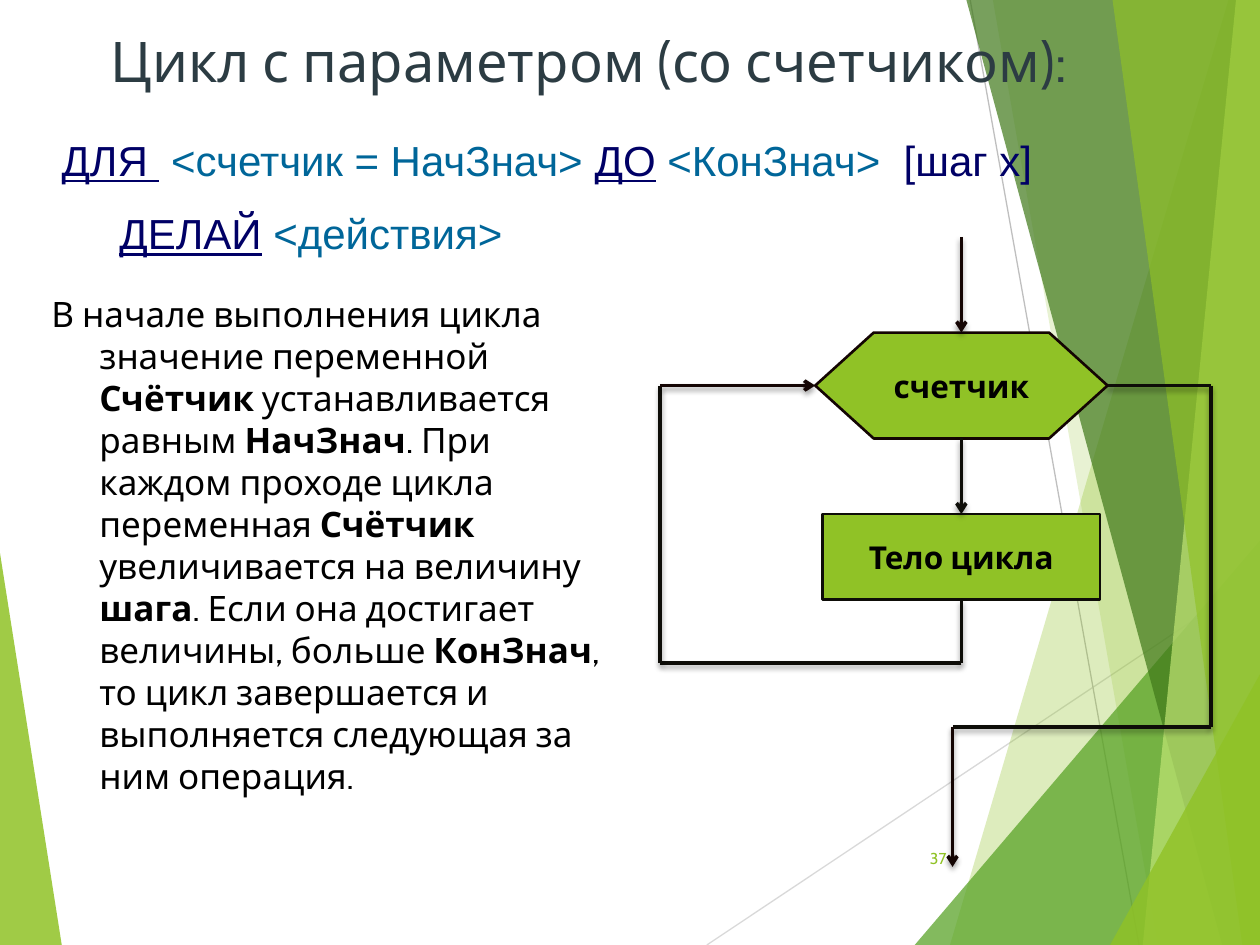
import itertools

import lxml.etree
import pptx
import pptx.dml.color
import pptx.enum.shapes
import pptx.enum.text
import pptx.oxml
import pptx.oxml.ns
import pptx.util

RGBColor = pptx.dml.color.RGBColor
Align = pptx.enum.text.PP_ALIGN
Anchor = pptx.enum.text.MSO_ANCHOR
Shape = pptx.enum.shapes.MSO_SHAPE

LIME = RGBColor(0x90, 0xC2, 0x26)
GREEN = RGBColor(0x54, 0xA0, 0x21)
FOREST = RGBColor(0x3F, 0x78, 0x19)
PALE = RGBColor(0xC0, 0xE4, 0x74)
LIGHT_GREY = RGBColor(0xD9, 0xD9, 0xD9)
GREY = RGBColor(0xBF, 0xBF, 0xBF)
SLATE = RGBColor(0x2C, 0x3C, 0x43)
NAVY = RGBColor(0x00, 0x00, 0x66)
TEAL = RGBColor(0x00, 0x66, 0x99)
BLACK = RGBColor(0x00, 0x00, 0x00)
WARM_INK = RGBColor(0x14, 0x05, 0x03)
INK = RGBColor(0x0E, 0x0D, 0x08)

# The grid: 100 columns by 75 rows over a 10 x 7.5 inch slide
COLUMNS, ROWS = 100, 75
CELL = pptx.util.Inches(0.1)
TOP, LEFT, BOTTOM, RIGHT = range(4)

SHADOW = (
    '<a:effectLst xmlns:a="http://schemas.openxmlformats.org/drawingml/2006/main">'
    '<a:outerShdw blurRad="38100" dist="25400" dir="5400000" rotWithShape="0">'
    '<a:srgbClr val="000000"><a:alpha val="35000"/></a:srgbClr>'
    "</a:outerShdw></a:effectLst>"
)


def grid(*cells):
    return [round(cell * CELL) for cell in cells]


def add_child(parent, tag, **attributes):
    return lxml.etree.SubElement(parent, pptx.oxml.ns.qn(tag), attributes)


def add_run(paragraph, text, font="Cabin", size=18, color=BLACK, bold=False, underline=False):
    run = paragraph.add_run()
    run.text = text
    run.font.name = font
    run.font.size = pptx.util.Pt(size)
    run.font.color.rgb = color
    run.font.bold = bold
    run.font.underline = underline


class SlideBuilder:
    """Holds the current slide and the style of its elements."""

    def __init__(self, slide):
        self.slide = slide
        self.shapes = slide.shapes

    def facet(self, points, color, opacity):
        start, *others = [grid(*point) for point in points]
        builder = self.shapes.build_freeform(*start)
        builder.add_line_segments(others, close=True)
        shape = builder.convert_to_shape()
        shape.shadow.inherit = False
        shape.line.fill.background()
        shape.fill.solid()
        shape.fill.fore_color.rgb = color
        color_element = shape.fill._xPr.find(".//" + pptx.oxml.ns.qn("a:srgbClr"))
        add_child(color_element, "a:alpha", val=str(opacity * 1000))

    def line(self, start, end, color=INK, width=2, arrow=False, shadow=True):
        """Draw a line; each end is a grid point or a (shape, side) pair."""
        joins = [isinstance(place[0], (int, float)) for place in (start, end)]
        points = [place if free else (0, 0) for place, free in zip((start, end), joins)]
        connector = self.shapes.add_connector(
            pptx.enum.shapes.MSO_CONNECTOR.STRAIGHT, *grid(*points[0], *points[1]))
        if not joins[0]:
            connector.begin_connect(*start)
        if not joins[1]:
            connector.end_connect(*end)
        connector.line.color.rgb = color
        connector.line.width = pptx.util.Pt(width)
        if arrow:
            add_child(connector.line._get_or_add_ln(), "a:tailEnd", type="arrow")
        properties = connector._element.spPr
        if shadow:
            properties.append(pptx.oxml.parse_xml(SHADOW))
        else:
            add_child(properties, "a:effectLst")

    def route(self, *places):
        """Draw a bent path whose last leg carries the arrowhead."""
        legs = list(itertools.pairwise(places))
        for leg in legs:
            last = leg is legs[-1]
            self.line(*leg, color=WARM_INK if last else INK, arrow=last)

    def block(self, kind, box, label, outline):
        shape = self.shapes.add_shape(kind, *grid(*box))
        shape.shadow.inherit = False
        shape.fill.solid()
        shape.fill.fore_color.rgb = LIME
        shape.line.color.rgb = outline
        shape.line.width = pptx.util.Pt(1.5)
        shape.text_frame.vertical_anchor = Anchor.MIDDLE
        paragraph = shape.text_frame.paragraphs[0]
        paragraph.alignment = Align.CENTER
        add_run(paragraph, label, bold=True)
        return shape

    def text(self, box, paragraphs, wrap=True, anchor=Anchor.TOP, align=Align.LEFT,
             margin=0, indent=0, space=0, **style):
        """Add paragraphs, each a list of (text, format) runs."""
        frame = self.shapes.add_textbox(*grid(*box)).text_frame
        frame.word_wrap = wrap
        frame.vertical_anchor = anchor
        for index, runs in enumerate(paragraphs):
            paragraph = frame.add_paragraph() if index else frame.paragraphs[0]
            paragraph.alignment = align
            if index:
                paragraph.space_before = pptx.util.Pt(space)
            if margin and (indent or index):
                properties = paragraph._p.get_or_add_pPr()
                properties.set("marL", str(grid(margin)[0]))
                properties.set("indent", str(grid(indent)[0]))
            for text, extra in runs:
                add_run(paragraph, text, **{**style, **extra})


def main():
    presentation = pptx.Presentation()
    presentation.slide_width, presentation.slide_height = grid(COLUMNS, ROWS)
    builder = SlideBuilder(presentation.slides.add_slide(presentation.slide_layouts[6]))

    # Faceted background
    builder.facet([(0, 43.9), (4.9, ROWS), (0, ROWS)], LIME, 85)
    builder.line((56.1, ROWS), (COLUMNS, 45.7), LIGHT_GREY, 0.75, shadow=False)
    builder.line((77, 0), (90.4, ROWS), GREY, 0.75, shadow=False)
    corner, base = (COLUMNS, 0), (COLUMNS, ROWS)
    for first, second, color, opacity in [
        ((97.5, 0), (75.4, ROWS), LIME, 30),
        ((78.8, 0), (91.9, ROWS), LIME, 20),
        ((COLUMNS, 42.9), (72.6, ROWS), GREEN, 72),
        ((76.7, 0), (97, ROWS), FOREST, 70),
        ((98.1, 0), (90.7, ROWS), PALE, 70),
        ((88.3, 0), (98.6, ROWS), LIME, 65),
        ((COLUMNS, 53.5), (88.1, ROWS), LIME, 80),
    ]:
        edge = [corner] if first[0] < COLUMNS else []
        builder.facet([first, second, base, *edge], color, opacity)

    # Loop syntax
    keyword, value = {"underline": True}, {"color": TEAL}
    builder.text((3.9, 10.2, 84.4, 11.1), [
        [("ДЛЯ ", keyword), (" ", {}), ("<счетчик = НачЗнач> ", value), ("ДО", keyword),
         (" ", {}), ("<КонЗнач>  ", value), ("[шаг х]", {})],
        [("ДЕЛАЙ", keyword), (" ", {}), ("<действия>", value)],
    ], margin=4.6, space=13, font="Arial", size=24, color=NAVY)

    # Title
    builder.text((7.8, 1.6, 85.6, 6.4), [[("Цикл с параметром (со счетчиком):", {})]],
                 wrap=False, size=32, color=SLATE)

    # Flowchart blocks
    counter = builder.block(Shape.FLOWCHART_PREPARATION, (64.7, 26.4, 23.2, 8.4),
                            "счетчик", WARM_INK)
    body = builder.block(Shape.RECTANGLE, (65.3, 40.8, 22, 6.8), "Тело цикла", INK)

    # Flowchart paths: entry, into the body, back to the counter, exit
    middle, axis = 30.6, 76.3
    builder.route((axis, 18.8), (counter, TOP))
    builder.line((counter, BOTTOM), (body, TOP), arrow=True)
    builder.route((body, BOTTOM), (axis, 52.6), (52.4, 52.6), (52.4, middle), (counter, LEFT))
    builder.route((counter, RIGHT), (96.1, middle), (96.1, 57.7), (75.6, 57.7), (75.6, 68.8))

    # Slide number
    builder.text((70.5, 66.1, 5.6, 4), [[("37", {})]], anchor=Anchor.MIDDLE,
                 align=Align.RIGHT, size=9, color=LIME)

    # Explanation
    bold = {"bold": True}
    builder.text((3.1, 22.7, 46.1, 44.5), [[
        ("В начале выполнения цикла значение переменной ", {}), ("Счётчик", bold),
        (" устанавливается равным ", {}), ("НачЗнач", bold),
        (". При каждом проходе цикла переменная ", {}), ("Счётчик", bold),
        (" увеличивается на величину ", {}), ("шага", bold),
        (". Если она достигает величины, больше ", {}), ("КонЗнач", bold),
        (", то цикл завершается и выполняется следующая за ним операция.", {}),
    ]], margin=3.8, indent=-3.8, size=20)

    presentation.save("out.pptx")


if __name__ == "__main__":
    main()
